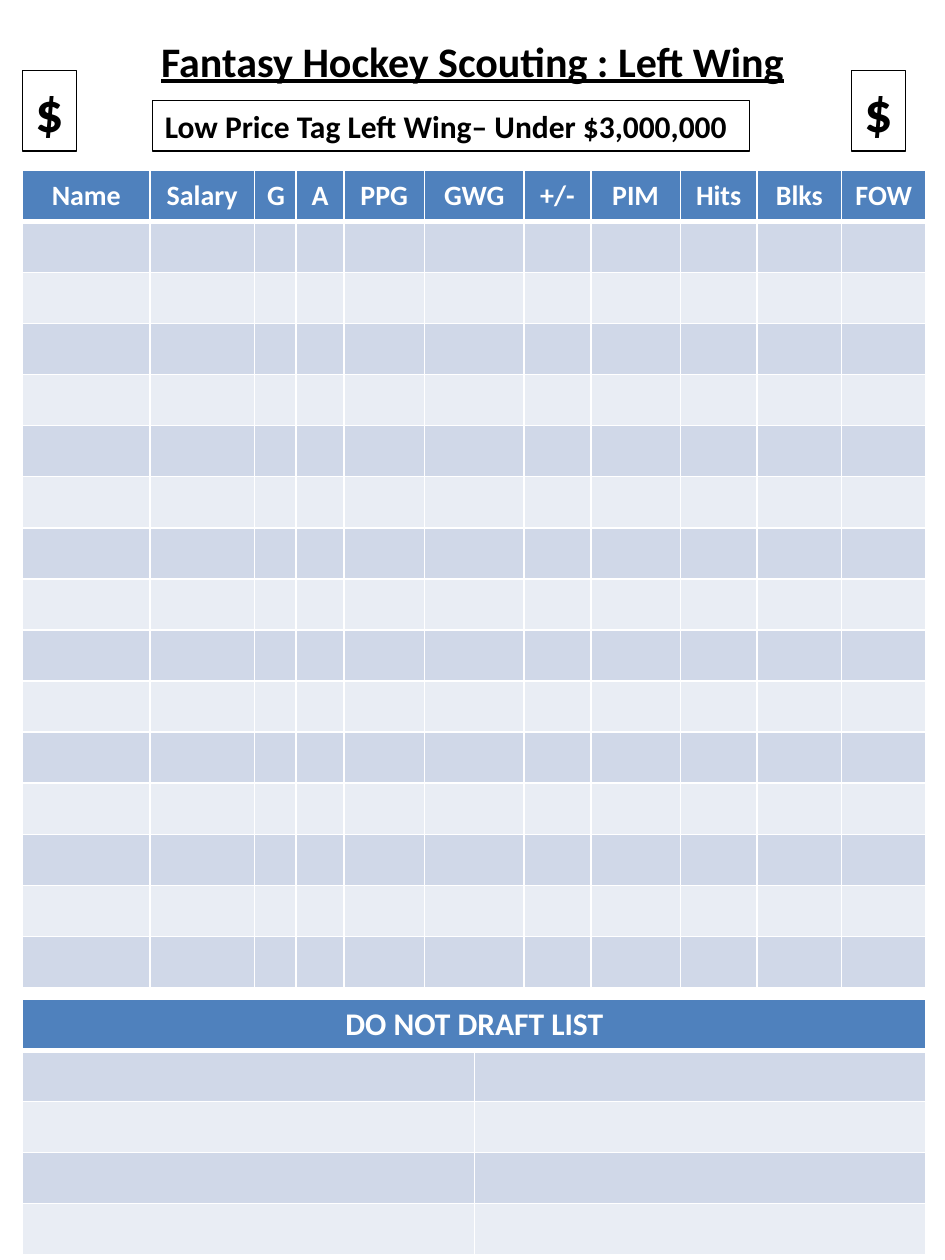
import pptx
import pptx.dml.color
import pptx.enum.text
import pptx.oxml
import pptx.oxml.ns
import pptx.util

# The page is a grid of 750 columns by 1000 rows.
GRID_COLUMNS, GRID_ROWS = 750, 1000
PAGE_WIDTH, PAGE_HEIGHT = pptx.util.Inches(7.5), pptx.util.Inches(10)

FONT = "Calibri"
BLACK, WHITE = "000000", "FFFFFF"
HEADER_BLUE = "4F81BD"
BANDS = ("D0D8E8", "E9EDF4")

TABLE_LEFT, TABLE_WIDTH, ROW_HEIGHT = 18, 717, 40.56
STATISTICS = {
    "Name": 101, "Salary": 83, "G": 33, "A": 38, "PPG": 64, "GWG": 79,
    "+/-": 53, "PIM": 71, "Hits": 61, "Blks": 67, "FOW": 67,
}
PLAYER_ROWS, DO_NOT_DRAFT_ROWS = 15, 4


def across(columns):
    return round(PAGE_WIDTH * columns / GRID_COLUMNS)


def down(rows):
    return round(PAGE_HEIGHT * rows / GRID_ROWS)


def colour(code):
    return pptx.dml.color.RGBColor.from_string(code)


def write(frame, text, size, code, centred=False, underline=None):
    frame.text = text
    para = frame.paragraphs[0]
    if centred:
        para.alignment = pptx.enum.text.PP_ALIGN.CENTER
    font = para.runs[0].font
    font.name, font.size = FONT, pptx.util.Pt(size)
    font.bold, font.underline = True, underline
    font.color.rgb = colour(code)


def add_title(slide, text):
    box = slide.shapes.add_textbox(across(56), down(18), across(638), down(60))
    frame = box.text_frame
    frame.word_wrap = True
    frame.vertical_anchor = pptx.enum.text.MSO_ANCHOR.MIDDLE
    write(frame, text, 24, BLACK, centred=True, underline=True)


def add_framed_text(slide, text, size, left, top, width, height):
    box = slide.shapes.add_textbox(across(left), down(top), across(width), down(height))
    box.line.color.rgb = colour(BLACK)
    box.line.width = pptx.util.Pt(0.75)
    frame = box.text_frame
    frame.word_wrap = False
    frame.auto_size = pptx.enum.text.MSO_AUTO_SIZE.SHAPE_TO_FIT_TEXT
    write(frame, text, size, BLACK)


def set_borders(cell, top, bottom):
    """Draw white cell edges; top and bottom are widths in points."""
    properties = cell._tc.get_or_add_tcPr()
    for side, width in {"L": 1, "R": 1, "T": top, "B": bottom}.items():
        properties.append(pptx.oxml.parse_xml(
            f'<a:ln{side} {pptx.oxml.ns.nsdecls("a")} w="{pptx.util.Pt(width)}">'
            f'<a:solidFill><a:srgbClr val="{WHITE}"/></a:solidFill></a:ln{side}>'
        ))


def add_banded_table(slide, top, widths, body_rows):
    """Add a table with a blue header row above alternating empty rows."""
    row_count = body_rows + 1
    table = slide.shapes.add_table(
        row_count, len(widths), across(TABLE_LEFT), down(top),
        across(TABLE_WIDTH), down(ROW_HEIGHT * row_count),
    ).table
    for column, width in zip(table.columns, widths):
        column.width = across(width)
    for index, row in enumerate(table.rows):
        row.height = down(ROW_HEIGHT)
        for cell in row.cells:
            set_borders(cell, top=3 if index == 1 else 1, bottom=3 if index == 0 else 1)
            cell.fill.solid()
            fill = BANDS[(index - 1) % 2] if index else HEADER_BLUE
            cell.fill.fore_color.rgb = colour(fill)
    return table


def add_scouting_table(slide):
    table = add_banded_table(slide, 135, list(STATISTICS.values()), PLAYER_ROWS)
    for cell, name in zip(table.rows[0].cells, STATISTICS):
        cell.vertical_anchor = pptx.enum.text.MSO_ANCHOR.MIDDLE
        write(cell.text_frame, name, 16, WHITE, centred=True)


def add_do_not_draft_table(slide):
    table = add_banded_table(slide, 793, [TABLE_WIDTH / 2] * 2, DO_NOT_DRAFT_ROWS)
    header = table.cell(0, 0)
    header.merge(table.cell(0, 1))
    write(header.text_frame, "DO NOT DRAFT LIST", 18, WHITE, centred=True)


def main():
    deck = pptx.Presentation()
    deck.slide_width, deck.slide_height = PAGE_WIDTH, PAGE_HEIGHT
    slide = deck.slides.add_slide(deck.slide_layouts[6])

    add_title(slide, "Fantasy Hockey Scouting : Left Wing")
    add_scouting_table(slide)
    add_framed_text(slide, "Low Price Tag Left Wing– Under $3,000,000", 18, 121, 80, 474, 40)
    add_do_not_draft_table(slide)
    for left in (676, 18):
        add_framed_text(slide, "$", 32, left, 56, 43, 64)

    deck.save("out.pptx")


if __name__ == "__main__":
    main()
